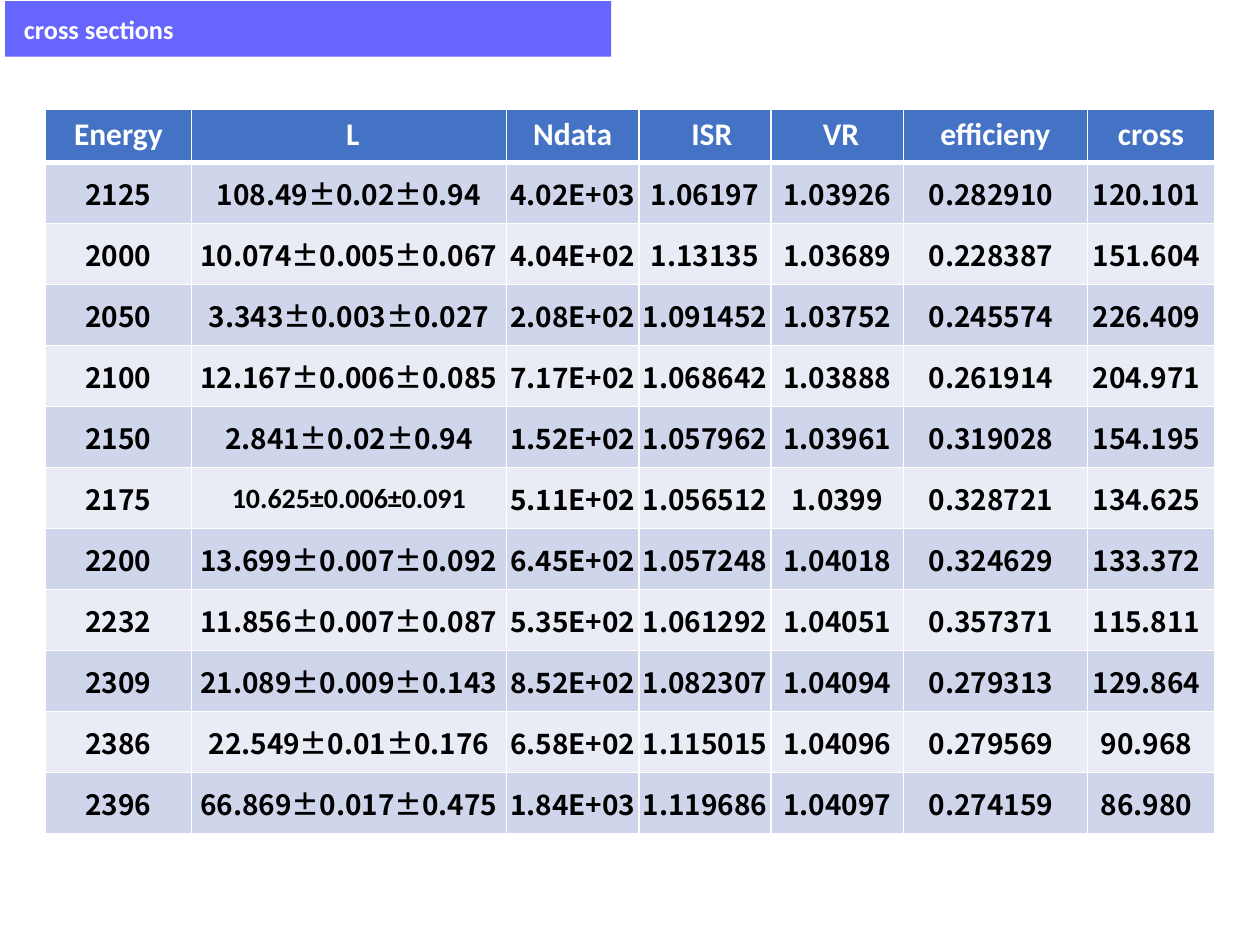
from lxml import etree
from pptx import Presentation
from pptx.dml.color import RGBColor
from pptx.enum.text import MSO_ANCHOR, PP_ALIGN
from pptx.oxml.ns import qn
from pptx.util import Inches, Pt

LEFT, CENTER = PP_ALIGN.LEFT, PP_ALIGN.CENTER
TOP, MIDDLE = MSO_ANCHOR.TOP, MSO_ANCHOR.MIDDLE

LATIN, CJK = "Calibri", "Noto Sans CJK SC"
WHITE, BLACK, TITLE_FILL = "FFFFFF", "000000", "6666FF"
HEADER_FILL, BANDS = "4472C4", ("CFD5EA", "E9EBF5")

COLUMN_WIDTHS = (1.16, 2.5, 1.05, 1.05, 1.05, 1.46, 1.01)
HEADERS = ("Energy", "L", "Ndata", "ISR", "VR", "efficieny", "cross")
HEADER_INDENTS = {"L": 0.06, "ISR": 0.11, "VR": 0.06}
TRAILING_INSETS = {"efficieny": 0.07, "cross": 0.07}
ROWS = (
    ("2125", "108.49±0.02±0.94", "4.02E+03", "1.06197", "1.03926", "0.282910", "120.101"),
    ("2000", "10.074±0.005±0.067", "4.04E+02", "1.13135", "1.03689", "0.228387", "151.604"),
    ("2050", "3.343±0.003±0.027", "2.08E+02", "1.091452", "1.03752", "0.245574", "226.409"),
    ("2100", "12.167±0.006±0.085", "7.17E+02", "1.068642", "1.03888", "0.261914", "204.971"),
    ("2150", "2.841±0.02±0.94", "1.52E+02", "1.057962", "1.03961", "0.319028", "154.195"),
    ("2175", "10.625±0.006±0.091", "5.11E+02", "1.056512", "1.0399", "0.328721", "134.625"),
    ("2200", "13.699±0.007±0.092", "6.45E+02", "1.057248", "1.04018", "0.324629", "133.372"),
    ("2232", "11.856±0.007±0.087", "5.35E+02", "1.061292", "1.04051", "0.357371", "115.811"),
    ("2309", "21.089±0.009±0.143", "8.52E+02", "1.082307", "1.04094", "0.279313", "129.864"),
    ("2386", "22.549±0.01±0.176", "6.58E+02", "1.115015", "1.04096", "0.279569", "90.968"),
    ("2396", "66.869±0.017±0.475", "1.84E+03", "1.119686", "1.04097", "0.274159", "86.980"),
)
LATIN_CELL = (6, 1)


def rgb(value):
    return RGBColor.from_string(value)


def set_fill(obj, color):
    obj.fill.solid()
    obj.fill.fore_color.rgb = rgb(color)


def write(tf, text, size=16, font=CJK, color=BLACK, align=CENTER):
    p = tf.paragraphs[0]
    p.alignment = align
    r = p.add_run()
    r.text = text
    r.font.size, r.font.name, r.font.bold = Pt(size), font, True
    r.font.color.rgb = rgb(color)
    etree.SubElement(r.font._element, qn("a:ea"), typeface=font)


def set_margins(obj, left, top, right, bottom):
    obj.margin_left, obj.margin_top = Inches(left), Inches(top)
    obj.margin_right, obj.margin_bottom = Inches(right), Inches(bottom)


def set_borders(cell, **widths):
    """Draw white borders; widths in points for the sides L, R, T and B."""
    tc_pr = cell._tc.get_or_add_tcPr()
    for side, width in widths.items():
        ln = etree.SubElement(tc_pr, qn(f"a:ln{side}"), w=str(Pt(width)))
        fill = etree.SubElement(ln, qn("a:solidFill"))
        etree.SubElement(fill, qn("a:srgbClr"), val=WHITE)


def add_title(slide, text, left, top, width, height):
    sp = slide.shapes.title
    sp.left, sp.top, sp.width, sp.height = left, top, width, height
    set_fill(sp, TITLE_FILL)
    tf = sp.text_frame
    tf.word_wrap, tf.vertical_anchor = True, MIDDLE
    set_margins(tf, 0.15, 0.05, 0.1, 0.05)
    write(tf, text, size=15, font=LATIN, color=WHITE, align=LEFT)


def format_header(cell, text):
    set_borders(cell, L=1, R=1, T=1, B=3)
    set_fill(cell, HEADER_FILL)
    cell.vertical_anchor = TOP
    set_margins(cell, 0.1 + HEADER_INDENTS.get(text, 0), 0.05, 0.1, 0.05)
    write(cell.text_frame, text, size=18, font=LATIN, color=WHITE)


def format_value(cell, text, row, col):
    set_borders(cell, L=1, R=1, T=3 if row == 1 else 1, B=1)
    set_fill(cell, BANDS[(row - 1) % 2])
    cell.vertical_anchor = MIDDLE
    set_margins(cell, 0.01, 0.01, 0.01 + TRAILING_INSETS.get(HEADERS[col], 0), 0)
    write(cell.text_frame, text, font=LATIN if (row, col) == LATIN_CELL else CJK)


def add_cross_section_table(slide, left, top, width, height):
    table = slide.shapes.add_table(len(ROWS) + 1, len(HEADERS),
                                   left, top, width, height).table
    table.horz_banding = False
    for column, share in zip(table.columns, COLUMN_WIDTHS):
        column.width = int(width * share / sum(COLUMN_WIDTHS))
    header_height = Inches(0.42)
    for i, row in enumerate(table.rows):
        row.height = int((height - header_height) / len(ROWS)) if i else header_height
    for col, text in enumerate(HEADERS):
        format_header(table.cell(0, col), text)
    for i, values in enumerate(ROWS, 1):
        for col, text in enumerate(values):
            format_value(table.cell(i, col), text, i, col)


def main():
    prs = Presentation()
    prs.slide_width, prs.slide_height = Inches(10), Inches(7.5)
    slide = prs.slides.add_slide(prs.slide_layouts[5])
    add_title(slide, "cross sections",
              Inches(0.04), Inches(0.01), Inches(4.81), Inches(0.44))
    add_cross_section_table(slide, Inches(0.36), Inches(0.87),
                            Inches(9.28), Inches(5.75))
    prs.save("out.pptx")


if __name__ == "__main__":
    main()
